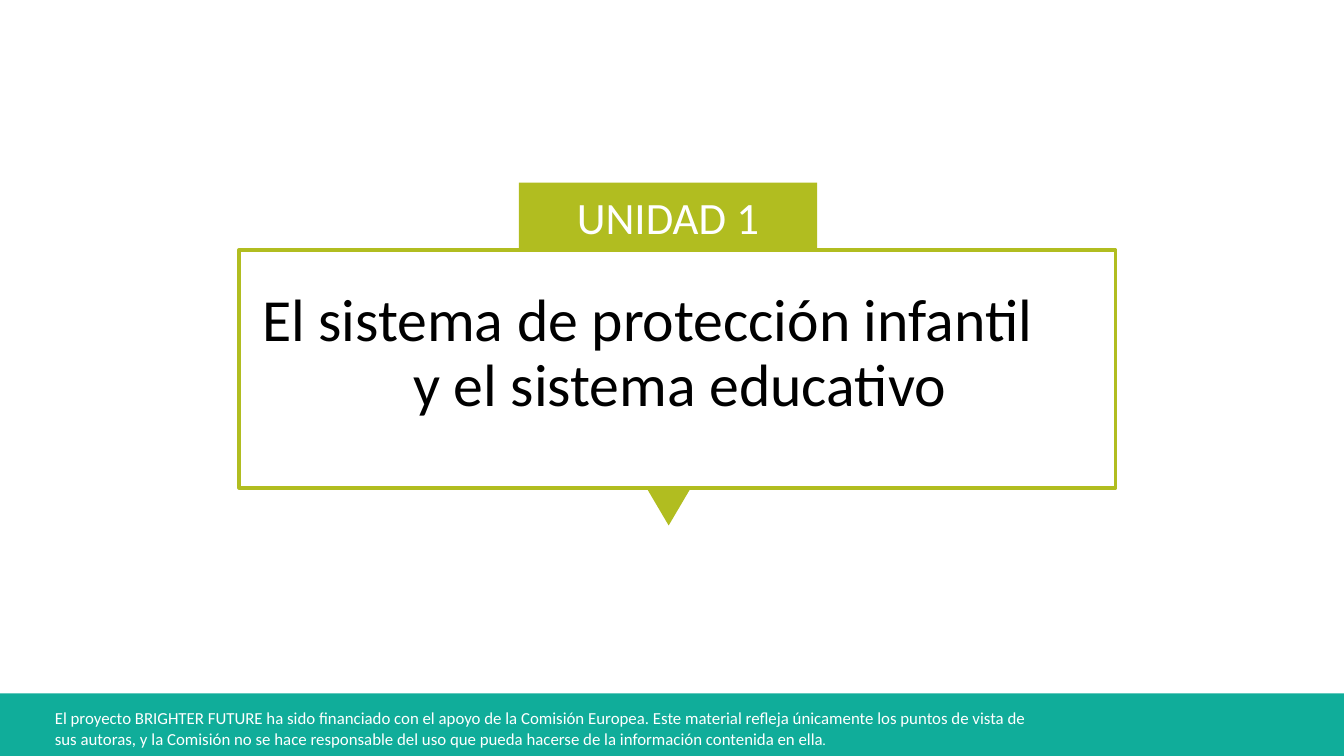
"""Build the opening slide of unit 1."""
from dataclasses import dataclass
from typing import Optional

from pptx import Presentation
from pptx.dml.color import RGBColor
from pptx.enum.shapes import MSO_SHAPE
from pptx.enum.text import MSO_ANCHOR, MSO_AUTO_SIZE, PP_ALIGN
from pptx.util import Inches, Pt


@dataclass(frozen=True)
class Theme:
    font: str = "Calibri"
    teal: str = "10AD9A"
    lime: str = "B1BD20"
    white: str = "FFFFFF"
    black: str = "000000"
    title: float = 32
    label: float = 24
    note: float = 9
    stop: float = 7.5
    edge: float = 2


@dataclass(frozen=True)
class Block:
    left: float
    top: float
    width: float
    height: float
    fill: Optional[str] = None
    line: Optional[str] = None
    kind: MSO_SHAPE = MSO_SHAPE.RECTANGLE
    turn: float = 0


THEME = Theme()
WIDTH = 10
HEIGHT = WIDTH * 9 / 16
BAND = Block(0, 5.16, WIDTH, HEIGHT - 5.16, fill=THEME.teal)
FRAME = Block(1.78, 1.86, 6.52, 1.77, line=THEME.lime)
LABEL = Block(3.86, 1.36, 2.22, 0.5, fill=THEME.lime)
POINTER = Block(4.81, 3.63, 0.33, 0.28, fill=THEME.lime,
                kind=MSO_SHAPE.ISOSCELES_TRIANGLE, turn=180)
NOTE = (
    "El proyecto BRIGHTER FUTURE ha sido financiado con el apoyo de la "
    "Comisión Europea. Este material refleja únicamente los puntos de vista "
    "de sus autoras, y la Comisión no se hace responsable del uso que pueda "
    "hacerse de la información contenida en ella"
)


def draw(slide, block: Block):
    shape = slide.shapes.add_shape(
        block.kind, Inches(block.left), Inches(block.top),
        Inches(block.width), Inches(block.height))
    shape.shadow.inherit = False
    shape.rotation = block.turn
    if block.fill:
        shape.fill.solid()
        shape.fill.fore_color.rgb = RGBColor.from_string(block.fill)
    else:
        shape.fill.background()
    if block.line:
        shape.line.color.rgb = RGBColor.from_string(block.line)
        shape.line.width = Pt(THEME.edge)
    else:
        shape.line.fill.background()
    return shape


def style(run, size: float, color: str) -> None:
    run.font.name = THEME.font
    run.font.size = Pt(size)
    run.font.color.rgb = RGBColor.from_string(color)


def write(shape, text: str, *, size: float, color: str = THEME.white,
          align: PP_ALIGN = PP_ALIGN.LEFT, anchor: MSO_ANCHOR = MSO_ANCHOR.TOP,
          inset: float = 0.05, space: float = 1):
    frame = shape.text_frame
    frame.word_wrap = True
    frame.auto_size = MSO_AUTO_SIZE.NONE
    frame.vertical_anchor = anchor
    frame.margin_left = frame.margin_right = Inches(0.1)
    frame.margin_top = frame.margin_bottom = Inches(inset)
    para = frame.paragraphs[0]
    para.text = text
    para.alignment = align
    para.line_spacing = space
    for run in para.runs:
        style(run, size, color)
    return para


def main() -> None:
    deck = Presentation()
    deck.slide_width, deck.slide_height = Inches(WIDTH), Inches(HEIGHT)
    slide = deck.slides.add_slide(deck.slide_layouts.get_by_name("Title Only"))

    draw(slide, BAND)
    note = slide.shapes.add_textbox(
        Inches(0.31), Inches(5.22), Inches(7.5), Inches(0.4))
    stop = write(note, NOTE, size=THEME.note).add_run()
    stop.text = "."
    style(stop, THEME.stop, THEME.white)

    draw(slide, FRAME)
    write(draw(slide, LABEL), "UNIDAD 1", size=THEME.label,
          align=PP_ALIGN.CENTER, anchor=MSO_ANCHOR.MIDDLE)
    draw(slide, POINTER)

    title = slide.shapes.title
    title.left, title.top = Inches(1.06), Inches(2.06)
    title.width, title.height = Inches(7.5), Inches(1.37)
    para = write(title, "El sistema de protección infantil \vy el sistema educativo",
                 size=THEME.title, color=THEME.black, align=PP_ALIGN.CENTER,
                 inset=0.1, space=0.9)
    props = para._p.get_or_add_pPr()
    props.set("marL", str(Inches(0.5)))
    props.set("indent", str(Inches(-0.38)))

    deck.save("out.pptx")


if __name__ == "__main__":
    main()
